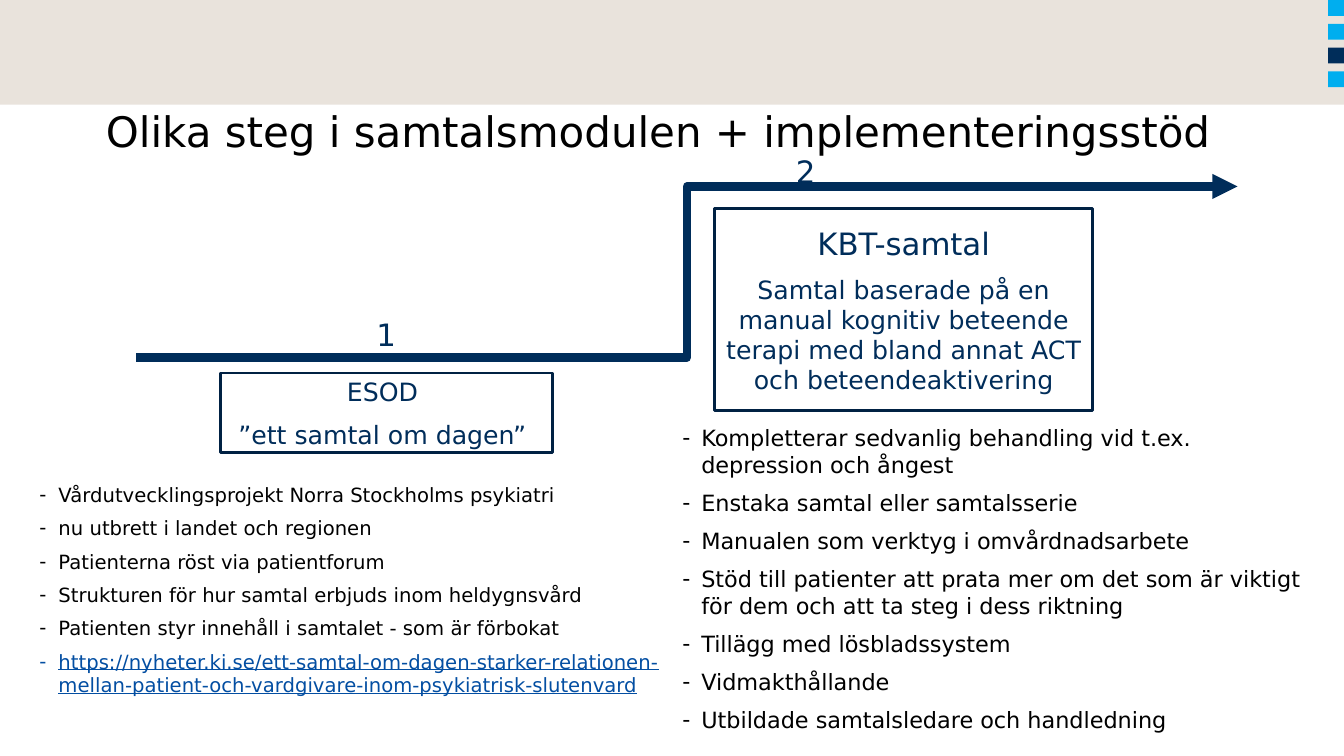
from lxml.etree import SubElement
from pptx import Presentation
from pptx.dml.color import RGBColor
from pptx.enum.shapes import MSO_CONNECTOR, MSO_SHAPE
from pptx.enum.text import MSO_ANCHOR, MSO_AUTO_SIZE, PP_ALIGN
from pptx.oxml.ns import qn
from pptx.util import Cm, Pt

FONT = "DejaVu Sans"
BLACK = RGBColor(0x00, 0x00, 0x00)
SAND = RGBColor(0xE9, 0xE3, 0xDC)
SKY = RGBColor(0x00, 0xAE, 0xEF)
NAVY = RGBColor(0x00, 0x2D, 0x5A)
BORDER = RGBColor(0x00, 0x21, 0x43)
LINK = RGBColor(0x03, 0x4E, 0xA2)


def write(frame, lines, color, align, anchor):
    """Fill a text frame with (text, size) lines, spaced by half the size."""
    frame.word_wrap = True
    frame.auto_size = MSO_AUTO_SIZE.NONE
    frame.vertical_anchor = anchor
    for i, (text, size) in enumerate(lines):
        paragraph = frame.paragraphs[0] if i == 0 else frame.add_paragraph()
        paragraph.alignment = align
        paragraph.line_spacing = 1.0
        paragraph.space_before = Pt(size / 2 if i else 0)
        run = paragraph.add_run()
        run.text = text
        format_values = {"name": FONT, "size": Pt(size)}
        for key, value in format_values.items():
            setattr(run.font, key, value)
        run.font.color.rgb = color


def add_block(left, top, width, height, color):
    block = slide.shapes.add_shape(
        MSO_SHAPE.RECTANGLE, Cm(left), Cm(top), Cm(width), Cm(height))
    block.shadow.inherit = False
    block.fill.solid()
    block.fill.fore_color.rgb = color
    block.line.fill.background()
    return block


prs = Presentation()
prs.slide_width, prs.slide_height = Cm(33.87), Cm(19.05)
slide = prs.slides.add_slide(prs.slide_layouts[3])
title, esod_list, kbt_list = slide.placeholders

# Top band with the column of small squares
add_block(0, 0, 33.87, 2.64, SAND)
for row, color in enumerate([SKY, SKY, NAVY, SKY]):
    add_block(33.47, 0.6 * row, 0.4, 0.4, color)

# Title
title.left, title.top, title.width, title.height = Cm(2.67), Cm(2.67), Cm(28.52), Cm(1.4)
write(title.text_frame, [("Olika steg i samtalsmodulen + implementeringsstöd", 30)],
      BLACK, PP_ALIGN.LEFT, MSO_ANCHOR.TOP)
for side in ("left", "top", "right", "bottom"):
    setattr(title.text_frame, f"margin_{side}", 0)

# Step arrow
step_arrow = slide.shapes.add_connector(
    MSO_CONNECTOR.ELBOW, Cm(3.43), Cm(9.01), Cm(31.19), Cm(4.7))
step_arrow.line.color.rgb = NAVY
step_arrow.line.width = Pt(6)
SubElement(step_arrow.line._get_or_add_ln(), qn("a:tailEnd"), type="triangle")
SubElement(step_arrow._element.spPr, qn("a:effectLst"))

# Step boxes
step_boxes = [
    (5.56, 9.4, 8.36, 2.01, [("ESOD ", 18), ("”ett samtal om dagen” ", 18)]),
    (18.01, 5.26, 9.53, 5.08, [
        ("KBT-samtal", 22),
        ("Samtal baserade på en manual kognitiv beteende terapi "
         "med bland annat ACT och beteendeaktivering", 18)]),
]
for left, top, width, height, lines in step_boxes:
    step_box = add_block(left, top, width, height, SAND)
    step_box.fill.background()
    step_box.line.color.rgb = BORDER
    step_box.line.width = Pt(2)
    write(step_box.text_frame, lines, NAVY, PP_ALIGN.CENTER, MSO_ANCHOR.MIDDLE)

# Step numbers
for number, left, top, width, height in [("1", 8.84, 7.39, 1.78, 2.08),
                                         ("2", 19.58, 3.3, 1.45, 2.01)]:
    step_number = slide.shapes.add_textbox(Cm(left), Cm(top), Cm(width), Cm(height))
    write(step_number.text_frame, [(number, 22)], NAVY, PP_ALIGN.CENTER, MSO_ANCHOR.MIDDLE)

# Lists under the steps
esod_points = [
    "Vårdutvecklingsprojekt Norra Stockholms psykiatri",
    "nu utbrett i landet och regionen",
    "Patienterna röst via patientforum",
    "Strukturen för hur samtal erbjuds inom heldygnsvård",
    "Patienten styr innehåll i samtalet - som är förbokat",
    "https://nyheter.ki.se/ett-samtal-om-dagen-starker-relationen-"
    "mellan-patient-och-vardgivare-inom-psykiatrisk-slutenvard",
]
kbt_points = [
    "Kompletterar sedvanlig behandling vid t.ex. depression och ångest",
    "Enstaka samtal eller samtalsserie",
    "Manualen som verktyg i omvårdnadsarbete",
    "Stöd till patienter att prata mer om det som är viktigt för dem "
    "och att ta steg i dess riktning",
    "Tillägg med lösbladssystem",
    "Vidmakthållande",
    "Utbildade samtalsledare och handledning",
]
for point_list, left, top, height, size, points in [
        (esod_list, 0.74, 12.04, 6.55, 14, esod_points),
        (kbt_list, 16.94, 10.57, 7.42, 16, kbt_points)]:
    point_list.left, point_list.top = Cm(left), Cm(top)
    point_list.width, point_list.height = Cm(16.2), Cm(height)
    write(point_list.text_frame, [(point, size) for point in points],
          BLACK, PP_ALIGN.LEFT, MSO_ANCHOR.TOP)
    for paragraph in point_list.text_frame.paragraphs:
        properties = paragraph._p.get_or_add_pPr()
        properties.set("marL", str(Cm(0.48)))
        properties.set("indent", str(-Cm(0.48)))
        SubElement(properties, qn("a:buFont"), typeface=FONT)
        SubElement(properties, qn("a:buChar"), char="-")

# Web address in link style
address = esod_list.text_frame.paragraphs[-1].runs[0]
address.font.color.rgb = LINK
address.font.underline = True

prs.save("out.pptx")
